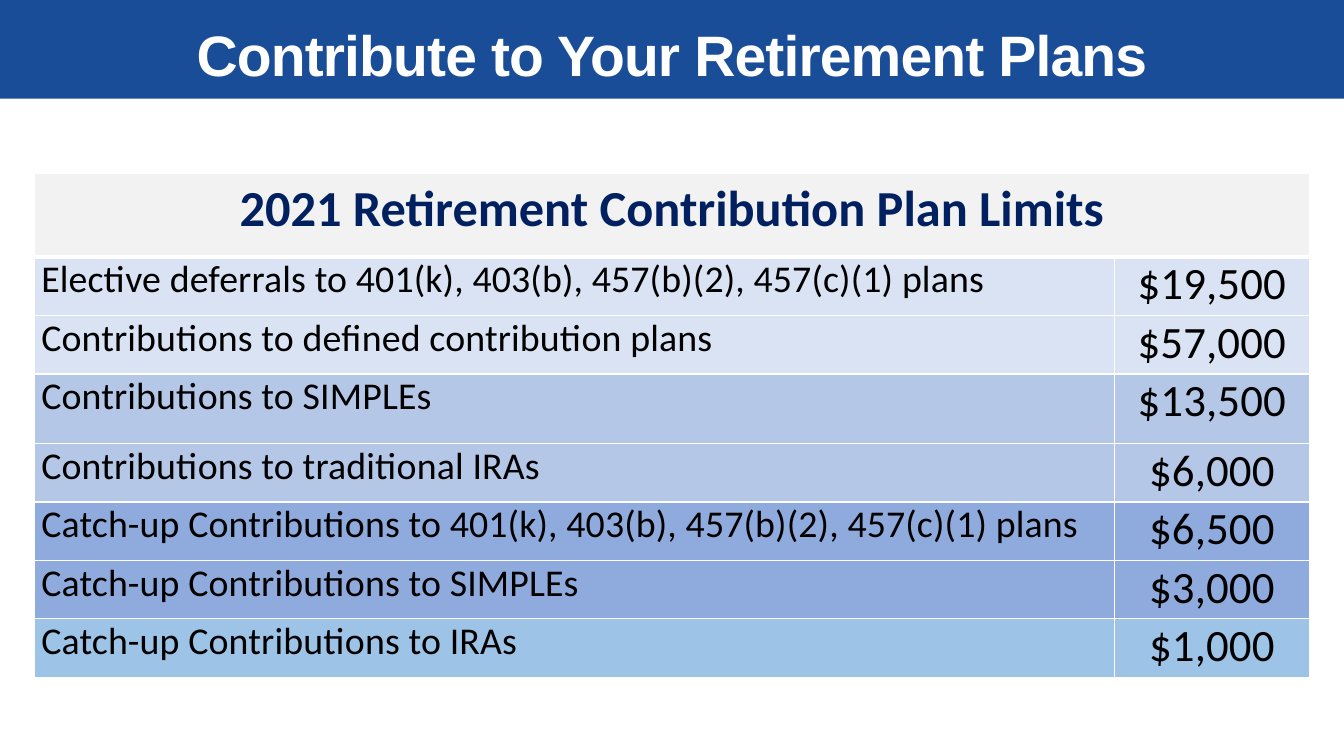
from lxml import etree
from pptx import Presentation
from pptx.dml.color import RGBColor
from pptx.enum.shapes import MSO_SHAPE
from pptx.enum.text import MSO_ANCHOR, PP_ALIGN
from pptx.oxml.ns import qn
from pptx.util import Inches, Pt

RECT = MSO_SHAPE.RECTANGLE
MIDDLE = MSO_ANCHOR.MIDDLE
CENTER, JUSTIFY = PP_ALIGN.CENTER, PP_ALIGN.JUSTIFY

WHITE = RGBColor(0xFF, 0xFF, 0xFF)
BLACK = RGBColor(0, 0, 0)
NAVY = RGBColor(0x00, 0x20, 0x60)
BANNER_BLUE = RGBColor(0x1A, 0x4D, 0x98)
HEADER_GREY = RGBColor(0xF2, 0xF2, 0xF2)
PALE = RGBColor(0xDA, 0xE3, 0xF3)
LIGHT = RGBColor(0xB4, 0xC7, 0xE7)
MEDIUM = RGBColor(0x8F, 0xAA, 0xDC)
SKY = RGBColor(0x9D, 0xC3, 0xE6)

LIMITS = [
    ("Elective deferrals to 401(k), 403(b), 457(b)(2), 457(c)(1) plans", "$19,500", PALE),
    ("Contributions to defined contribution plans", "$57,000", PALE),
    ("Contributions to SIMPLEs", "$13,500", LIGHT),
    ("Contributions to traditional IRAs", "$6,000", LIGHT),
    ("Catch-up Contributions to 401(k), 403(b), 457(b)(2), 457(c)(1) plans", "$6,500", MEDIUM),
    ("Catch-up Contributions to SIMPLEs", "$3,000", MEDIUM),
    ("Catch-up Contributions to IRAs", "$1,000", SKY),
]
COLUMN_WIDTHS = [10.71, 1.94]
ROW_HEIGHTS = [0.83, 0.58, 0.58, 0.69, 0.58, 0.58, 0.58, 0.58]


def add_text(tf, text, size, color, font, align, bold=False, spacing=0):
    p = tf.paragraphs[0]
    p.alignment = align
    r = p.add_run()
    r.text = text
    r.font.size = Pt(size)
    r.font.name = font
    r.font.bold = bold
    r.font.color.rgb = color
    if spacing:
        r.font._element.set("spc", str(round(spacing * 100)))


def set_borders(cell, bottom=1):
    tc_pr = cell._tc.get_or_add_tcPr()
    sides = [("a:lnL", 1), ("a:lnR", 1), ("a:lnT", 1), ("a:lnB", bottom)]
    for i, (tag, width) in enumerate(sides):
        ln = etree.Element(qn(tag), w=str(Pt(width)))
        fill = etree.SubElement(ln, qn("a:solidFill"))
        etree.SubElement(fill, qn("a:srgbClr"), val=str(WHITE))
        tc_pr.insert(i, ln)


def fill_cell(cell, color, bottom=1):
    cell.fill.solid()
    cell.fill.fore_color.rgb = color
    set_borders(cell, bottom)


def add_banner(s, left, top, width, height):
    sp = s.shapes.add_shape(RECT, Inches(left), Inches(top), Inches(width), Inches(height))
    sp.shadow.inherit = False
    sp.fill.solid()
    sp.fill.fore_color.rgb = BANNER_BLUE
    sp.line.fill.background()
    tf = sp.text_frame
    tf.word_wrap = True
    tf.vertical_anchor = MIDDLE
    tf.margin_top, tf.margin_bottom = Inches(0.16), Inches(0.05)
    add_text(tf, "Contribute to Your Retirement Plans", 40.7, WHITE, "Arial", CENTER,
             bold=True, spacing=-0.6)


def add_limits_table(s, left, top, width, height):
    table = s.shapes.add_table(len(ROW_HEIGHTS), len(COLUMN_WIDTHS), Inches(left),
                               Inches(top), Inches(width), Inches(height)).table
    table.horz_banding = False
    for column, w in zip(table.columns, COLUMN_WIDTHS):
        column.width = Inches(w * width / sum(COLUMN_WIDTHS))
    for row, h in zip(table.rows, ROW_HEIGHTS):
        row.height = Inches(h * height / sum(ROW_HEIGHTS))

    header = table.cell(0, 0)
    header.merge(table.cell(0, 1))
    for cell in table.rows[0].cells:
        fill_cell(cell, HEADER_GREY, bottom=3)
    add_text(header.text_frame, "2021 Retirement Contribution Plan Limits", 36, NAVY,
             "Calibri", CENTER, bold=True)

    for i, (plan, limit, color) in enumerate(LIMITS, start=1):
        columns = [(plan, 27, JUSTIFY), (limit, 32, CENTER)]
        for j, (text, size, align) in enumerate(columns):
            cell = table.cell(i, j)
            cell.margin_left = cell.margin_right = Inches(0.07)
            cell.margin_top = cell.margin_bottom = 0
            fill_cell(cell, color)
            add_text(cell.text_frame, text, size, BLACK, "Calibri", align, spacing=0.1)


def main():
    prs = Presentation()
    prs.slide_width, prs.slide_height = Inches(13.33), Inches(7.5)
    s = prs.slides.add_slide(prs.slide_layouts[6])
    add_banner(s, 0, -0.02, 13.33, 1)
    add_limits_table(s, 0.34, 1.72, 12.65, 5)
    prs.save("out.pptx")


if __name__ == "__main__":
    main()
